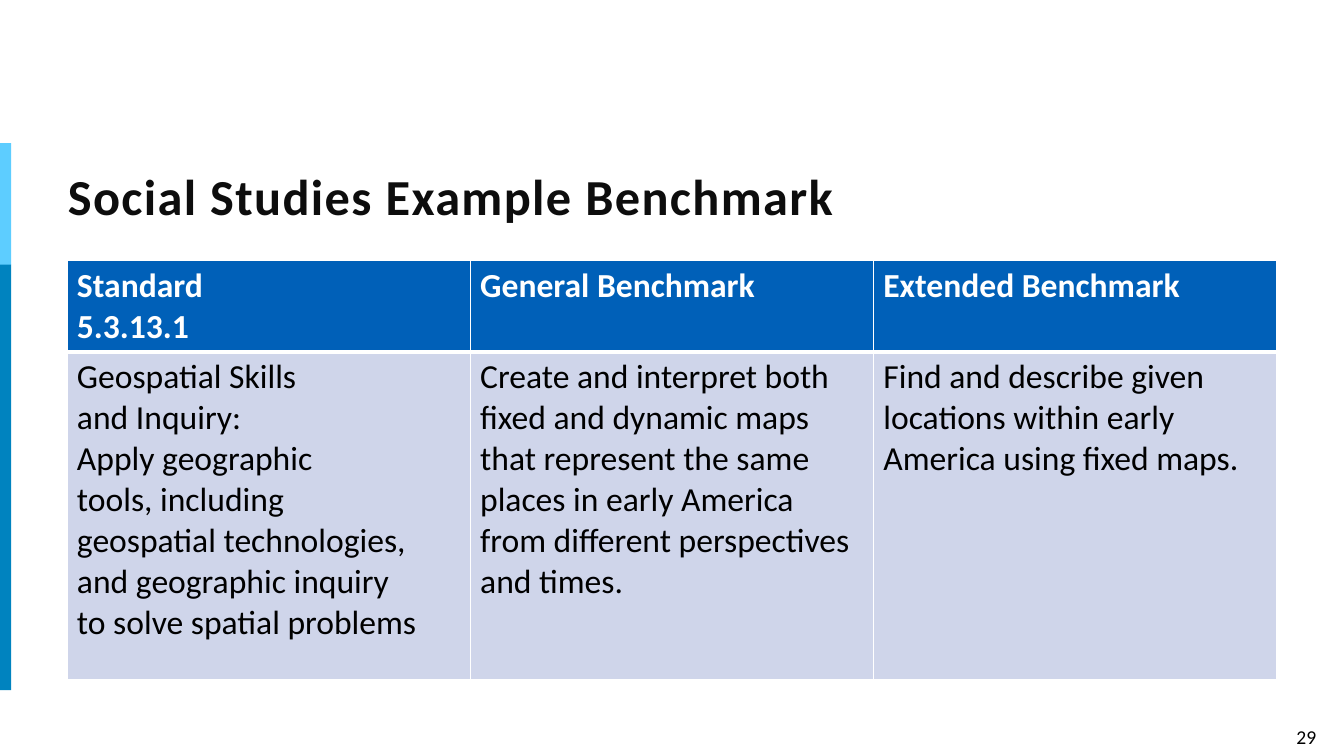
from lxml.etree import SubElement
from pptx import Presentation
from pptx.dml.color import RGBColor
from pptx.enum.shapes import MSO_SHAPE as Shape
from pptx.enum.text import MSO_ANCHOR as Anchor, PP_ALIGN as Align
from pptx.oxml.ns import qn
from pptx.util import Pt

FONT = "Calibri"
COLORS = {
    "white": "FFFFFF",
    "black": "000000",
    "title": "0D0D0D",
    "light_bar": "5DCDFF",
    "dark_bar": "0083BF",
    "header": "0060B8",
    "body": "CFD5EA",
}

# Header cells hold one string per paragraph; "~" stands for a no-break space
HEADERS = [["Standard", "5.3.13.1"], ["General Benchmark"], ["Extended Benchmark"]]
BODIES = [
    ["Geospatial Skills and~Inquiry: Apply~geographic tools,~including "
     "geospatial~technologies, and~geographic inquiry to~solve spatial problems"],
    ["Create and interpret~both fixed and dynamic~maps that represent the~same "
     "places in early~America from different~perspectives and times."],
    ["Find and describe given locations within early America using fixed maps."],
]


def color(name):
    return RGBColor.from_string(COLORS[name])


def add_span(para, text, size, ink, bold=False):
    span = para.add_run()
    span.text = text.replace("~", chr(160))
    span.font.name = FONT
    span.font.size = Pt(size)
    span.font.bold = bold
    span.font.color.rgb = color(ink)
    return span


def add_bar(page, top, height, fill):
    bar = page.shapes.add_shape(Shape.RECTANGLE, Pt(-2), Pt(top), Pt(10), Pt(height))
    bar.shadow.inherit = False
    bar.fill.solid()
    bar.fill.fore_color.rgb = color(fill)
    bar.line.fill.background()


def add_title(page, text):
    box = page.shapes.add_textbox(Pt(48.5), Pt(91.5), Pt(864.5), Pt(93))
    frame = box.text_frame
    frame.word_wrap = True
    frame.vertical_anchor = Anchor.MIDDLE
    frame.margin_left, frame.margin_top = Pt(0), Pt(14.4)
    para = frame.paragraphs[0]
    para.line_spacing = 0.8
    span = add_span(para, text, 36, "title", bold=True)
    span.font._element.set("spc", "100")


def add_page_number(page, number):
    box = page.shapes.add_shape(Shape.RECTANGLE, Pt(909.4), Pt(514), Pt(47.5), Pt(24.5))
    box.shadow.inherit = False
    box.fill.background()
    box.line.color.rgb = color("white")
    box.line.width = Pt(0.75)
    para = box.text_frame.paragraphs[0]
    para.alignment = Align.CENTER
    add_span(para, number, 14, "black")


def set_borders(cell, widths):
    properties = cell._tc.get_or_add_tcPr()
    for position, (side, width) in enumerate(zip("LRTB", widths)):
        line = properties.makeelement(qn(f"a:ln{side}"), {"w": str(Pt(width))})
        fill = SubElement(line, qn("a:solidFill"))
        SubElement(fill, qn("a:srgbClr"), val=COLORS["white"])
        properties.insert(position, line)


def fill_cell(cell, lines, fill, ink, bold, borders):
    cell.fill.solid()
    cell.fill.fore_color.rgb = color(fill)
    set_borders(cell, borders)
    frame = cell.text_frame
    for index, text in enumerate(lines):
        para = frame.add_paragraph() if index else frame.paragraphs[0]
        add_span(para, text, 24, ink, bold)


def add_benchmark_table(page):
    heights = [65, 234]
    frame = page.shapes.add_table(2, 3, Pt(47.8), Pt(186.2), Pt(864), Pt(sum(heights)))
    table = frame.table
    for row, height in zip(table.rows, heights):
        row.height = Pt(height)
    for column, (header, body) in enumerate(zip(HEADERS, BODIES)):
        table.columns[column].width = Pt(288)
        fill_cell(table.cell(0, column), header, "header", "white", True, (1, 1, 1, 3))
        fill_cell(table.cell(1, column), body, "body", "black", False, (1, 1, 3, 1))


def main():
    deck = Presentation()
    deck.slide_width, deck.slide_height = Pt(960), Pt(540)
    page = deck.slides.add_slide(deck.slide_layouts[6])

    # Page frame
    add_page_number(page, "29")
    add_bar(page, 102.2, 87, "light_bar")
    add_bar(page, 189, 304, "dark_bar")

    # Content
    add_title(page, "Social Studies Example Benchmark")
    add_benchmark_table(page)

    deck.save("out.pptx")


if __name__ == "__main__":
    main()
